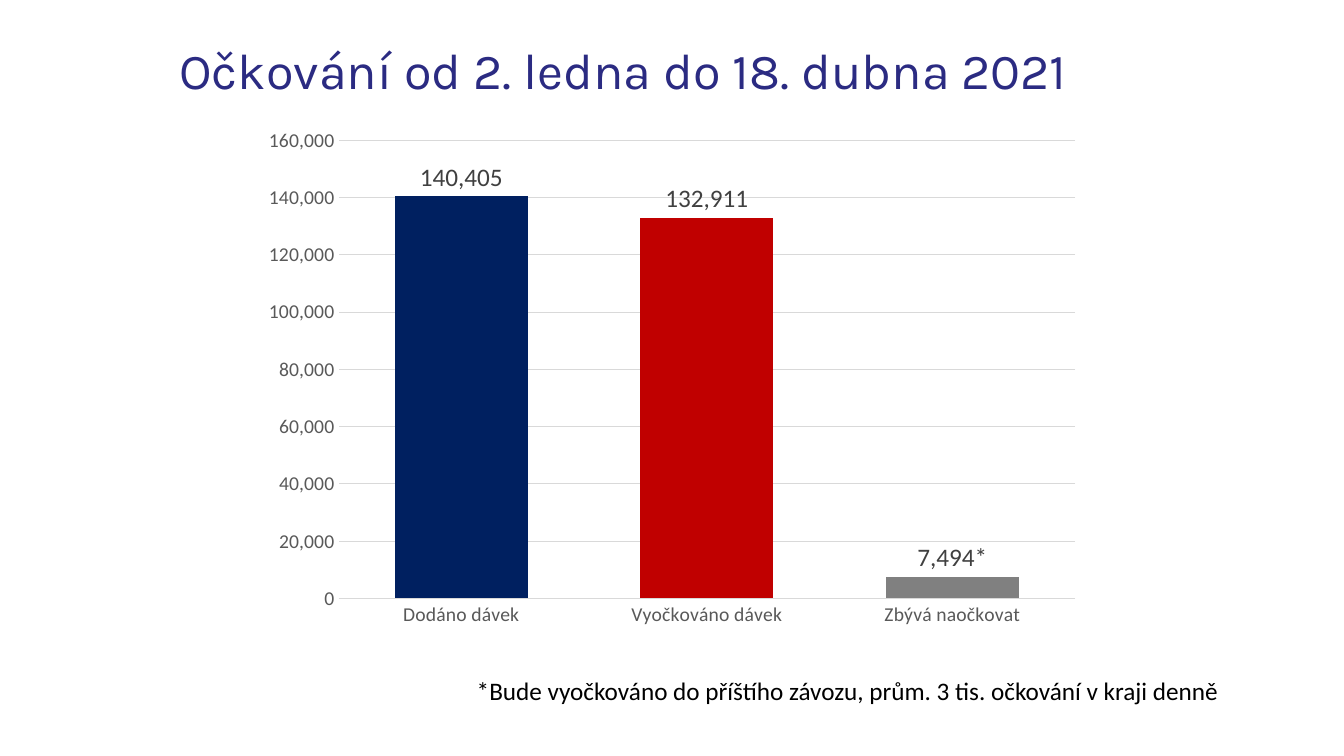
from pptx import Presentation
from pptx.chart.data import CategoryChartData
from pptx.dml.color import RGBColor
from pptx.enum.chart import XL_CHART_TYPE, XL_LABEL_POSITION, XL_TICK_MARK
from pptx.enum.text import MSO_ANCHOR, MSO_AUTO_SIZE, PP_ALIGN
from pptx.util import Pt

PX = 9144
HUES = {
    "title": "2B2B82",
    "black": "000000",
    "axis": "595959",
    "label": "404040",
    "grid": "D9D9D9",
    "base": "4472C4",
    "navy": "002060",
    "red": "C00000",
    "gray": "808080",
}


def hue(name):
    return RGBColor.from_string(HUES[name])


def style(font, size=18, color="black", face="Calibri"):
    font.size = Pt(size)
    font.name = face
    font.bold = False
    font.color.rgb = hue(color)


def write(frame, text, align=PP_ALIGN.LEFT, spacing=None, **look):
    para = frame.paragraphs[0]
    para.alignment = align
    para.line_spacing = spacing
    run = para.add_run()
    run.text = text
    style(run.font, **look)


class Deck:
    def __init__(self, width, height):
        self.show = Presentation()
        self.show.slide_width = width * PX
        self.show.slide_height = height * PX
        self.slide = self.show.slides.add_slide(self.show.slide_layouts[5])

    def title(self, text, box):
        shape = self.slide.shapes.title
        shape.left, shape.top, shape.width, shape.height = [n * PX for n in box]
        frame = shape.text_frame
        frame.auto_size = MSO_AUTO_SIZE.NONE
        frame.vertical_anchor = MSO_ANCHOR.MIDDLE
        frame.margin_left = 20 * PX
        write(frame, text, spacing=0.9, size=36, color="title", face="Karla")

    def note(self, text, box):
        shape = self.slide.shapes.add_textbox(*[n * PX for n in box])
        frame = shape.text_frame
        frame.word_wrap = False
        frame.auto_size = MSO_AUTO_SIZE.SHAPE_TO_FIT_TEXT
        write(frame, text)

    def chart(self, bars, box):
        data = CategoryChartData(number_format="#,##0")
        data.categories = [name for name, count, color in bars]
        data.add_series("Series 1", [count for name, count, color in bars])
        chart = self.slide.shapes.add_chart(
            XL_CHART_TYPE.COLUMN_CLUSTERED, *[n * PX for n in box], data
        ).chart
        chart.has_legend = False
        chart.has_title = False
        style(chart.font, size=10)
        self.axes(chart)
        plot = chart.plots[0]
        plot.gap_width = 85
        plot.overlap = -24
        plot.vary_by_categories = False
        series = plot.series[0]
        self.fill(series, "base")
        for index, (name, count, color) in enumerate(bars):
            self.fill(series.points[index], color)
        labels = series.data_labels
        labels.show_value = True
        labels.position = XL_LABEL_POSITION.OUTSIDE_END
        labels.number_format = "#,##0"
        labels.number_format_is_linked = False
        style(labels.font, color="label")
        return series

    def axes(self, chart):
        for axis in (chart.category_axis, chart.value_axis):
            axis.major_tick_mark = XL_TICK_MARK.NONE
            axis.minor_tick_mark = XL_TICK_MARK.NONE
            style(axis.tick_labels.font, size=14, color="axis")
        self.line(chart.category_axis.format.line, 1)
        axis = chart.value_axis
        axis.format.line.fill.background()
        axis.minimum_scale = 0
        axis.maximum_scale = 160000
        axis.major_unit = 20000
        axis.tick_labels.number_format = "#,##0"
        axis.tick_labels.number_format_is_linked = False
        self.line(axis.major_gridlines.format.line, 0.75)

    def line(self, line, width):
        line.color.rgb = hue("grid")
        line.width = Pt(width)

    def fill(self, part, color):
        part.format.fill.solid()
        part.format.fill.fore_color.rgb = hue(color)

    def mark(self, series, index, text):
        label = series.points[index].data_label
        write(label.text_frame, text, align=None, color="label")
        label.position = XL_LABEL_POSITION.OUTSIDE_END


def main():
    deck = Deck(1333, 750)
    deck.title("Očkování od 2. ledna do 18. dubna 2021", (158, 19, 1069, 107))
    bars = [
        ("Dodáno dávek", 140405, "navy"),
        ("Vyočkováno dávek", 132911, "red"),
        ("Zbývá naočkovat", 7494, "gray"),
    ]
    series = deck.chart(bars, (250, 117, 833, 515))
    deck.mark(series, 2, "7,494*")
    deck.note(
        "*Bude vyočkováno do příštího závozu, prům. 3 tis. očkování v kraji denně",
        (463, 665, 764, 40),
    )
    deck.show.save("out.pptx")


if __name__ == "__main__":
    main()
